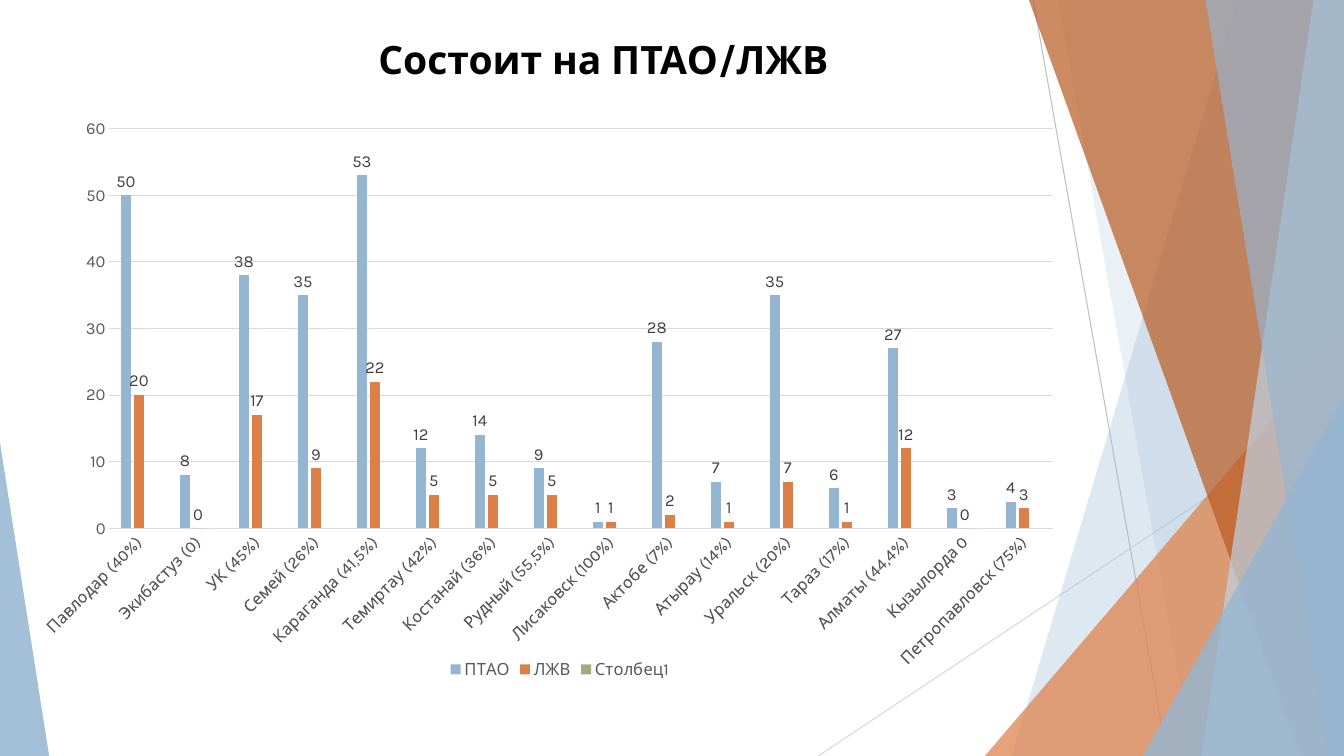
from lxml.etree import SubElement
from pptx import Presentation
from pptx.chart.data import CategoryChartData
from pptx.dml.color import RGBColor
from pptx.enum.chart import XL_CHART_TYPE, XL_LABEL_POSITION, XL_LEGEND_POSITION, XL_TICK_MARK
from pptx.enum.shapes import MSO_CONNECTOR, MSO_SHAPE
from pptx.enum.text import MSO_ANCHOR, PP_ALIGN
from pptx.oxml import parse_xml
from pptx.oxml.ns import nsdecls, qn
from pptx.util import Cm, Pt

FONT = "Karla"
WIDTH, HEIGHT = 33.87, 19.05
TITLE = "Состоит на ПТАО/ЛЖВ"

# city with its share, ПТАО, ЛЖВ
CITIES = [
    ("Павлодар (40%)", 50, 20), ("Экибастуз (0)", 8, 0),
    ("УК (45%)", 38, 17), ("Семей (26%)", 35, 9),
    ("Караганда (41,5%)", 53, 22), ("Темиртау (42%)", 12, 5),
    ("Костанай (36%)", 14, 5), ("Рудный (55,5%)", 9, 5),
    ("Лисаковск (100%)", 1, 1), ("Актобе (7%)", 28, 2),
    ("Атырау (14%)", 7, 1), ("Уральск (20%)", 35, 7),
    ("Тараз (17%)", 6, 1), ("Алматы (44,4%)", 27, 12),
    ("Кызылорда 0", 3, 0), ("Петропавловск (75%)", 4, 3),
]
NAMES, PTAO, LZHV = zip(*CITIES)
SERIES = [
    ("ПТАО", PTAO, "94B6D2"),
    ("ЛЖВ", LZHV, "DD8047"),
    ("Столбец1", [None] * len(CITIES), "A5AB81"),
]

# x1, y1, x2, y2, colour
RAYS = [
    (26.04, 0, 29.41, HEIGHT, "BFBFBF"),
    (WIDTH, 10.24, 20.62, HEIGHT, "D9D9D9"),
]
# Back to front. Band: top left x, bottom left x; it reaches the right edge.
# Wedge: left, top, width, apex; it stands on the bottom edge.
FACETS = [
    ("band", (31.19, 25.5), "94B6D2", 30),
    ("band", (26.67, 30.05), "94B6D2", 20),
    ("wedge", (24.82, 8.46, 9.05, 1), "DD8047", 72),
    ("band", (25.93, 32.79), "B95B22", 70),
    ("band", (33.1, 30.28), "BFD3E4", 70),
    ("band", (30.38, 33.48), "94B6D2", 65),
    ("wedge", (28.8, 9.98, 5.07, 1), "94B6D2", 80),
    ("wedge", (0, 11.15, 1.24, 0), "94B6D2", 85),
]


def rgb(colour):
    return RGBColor.from_string(colour)


def style_font(font, size, colour, bold=False):
    font.name, font.size, font.bold = FONT, Pt(size), bold
    font.color.rgb = rgb(colour)


def style_line(line, colour):
    line.color.rgb = rgb(colour)
    line.width = Pt(0.75)


def add_ray(x1, y1, x2, y2, colour):
    line = shapes.add_connector(MSO_CONNECTOR.STRAIGHT, Cm(x1), Cm(y1), Cm(x2), Cm(y2))
    style_line(line.line, colour)
    SubElement(line._element.spPr, qn("a:effectLst"))


def add_facet(kind, place, colour, opacity):
    if kind == "band":
        top_x, bottom_x = place
        outline = shapes.build_freeform(Cm(top_x), 0)
        outline.add_line_segments(
            [(Cm(x), Cm(y)) for x, y in [(WIDTH, 0), (WIDTH, HEIGHT), (bottom_x, HEIGHT)]])
        sp = outline.convert_to_shape()
    else:
        left, top, width, apex = place
        sp = shapes.add_shape(MSO_SHAPE.ISOSCELES_TRIANGLE, Cm(left), Cm(top),
                              Cm(width), Cm(HEIGHT - top))
        sp.adjustments[0] = apex
    sp.shadow.inherit = False
    sp.line.fill.background()
    sp.fill.solid()
    sp.fill.fore_color.rgb = rgb(colour)
    srgb = sp._element.spPr.find(".//" + qn("a:srgbClr"))
    SubElement(srgb, qn("a:alpha"), val=str(opacity * 1000))


def add_text(text, left, top, width, height, *, size, colour, bold):
    tf = shapes.add_textbox(Cm(left), Cm(top), Cm(width), Cm(height)).text_frame
    tf.word_wrap = True
    tf.vertical_anchor = MSO_ANCHOR.TOP
    tf.margin_top, tf.margin_bottom = Cm(0.2), 0
    p = tf.paragraphs[0]
    p.alignment = PP_ALIGN.CENTER
    r = p.add_run()
    r.text = text
    style_font(r.font, size, colour, bold)


def place_plot(chart, x, y, w, h):
    """Fix the inner plot area as fractions of the chart."""
    plot_area = chart._chartSpace.chart.plotArea
    for old in plot_area.findall(qn("c:layout")):
        plot_area.remove(old)
    plot_area.insert(0, parse_xml(
        f'<c:layout {nsdecls("c")}><c:manualLayout><c:layoutTarget val="inner"/>'
        '<c:xMode val="edge"/><c:yMode val="edge"/>'
        f'<c:x val="{x}"/><c:y val="{y}"/><c:w val="{w}"/><c:h val="{h}"/>'
        '</c:manualLayout></c:layout>'))


def add_city_chart(left, top, width, height):
    data = CategoryChartData()
    data.categories = NAMES
    for name, values, _ in SERIES:
        data.add_series(name, values)
    chart = shapes.add_chart(XL_CHART_TYPE.COLUMN_CLUSTERED, Cm(left), Cm(top),
                             Cm(width), Cm(height), data).chart
    style_font(chart.font, 10, "000000")
    chart.has_title = False
    chart.has_legend = True
    chart.legend.position = XL_LEGEND_POSITION.BOTTOM
    chart.legend.include_in_layout = False
    style_font(chart.legend.font, 12, "595959")

    for axis in (chart.category_axis, chart.value_axis):
        axis.major_tick_mark = axis.minor_tick_mark = XL_TICK_MARK.NONE
        style_font(axis.tick_labels.font, 12, "595959")
    style_line(chart.category_axis.format.line, "D9D9D9")
    values_axis = chart.value_axis
    values_axis.minimum_scale, values_axis.maximum_scale = 0, 60
    values_axis.major_unit = 10
    values_axis.format.line.fill.background()
    style_line(values_axis.major_gridlines.format.line, "D9D9D9")

    plot = chart.plots[0]
    plot.gap_width, plot.overlap = 219, -27
    plot.vary_by_categories = False
    for series, (_, _, colour) in zip(plot.series, SERIES):
        series.format.fill.solid()
        series.format.fill.fore_color.rgb = rgb(colour)
        labels = series.data_labels
        labels.show_value = True
        labels.position = XL_LABEL_POSITION.OUTSIDE_END
        style_font(labels.font, 12, "404040")
    place_plot(chart, 0.053, 0.074, 0.937, 0.667)


prs = Presentation()
prs.slide_width, prs.slide_height = Cm(WIDTH), Cm(HEIGHT)
shapes = prs.slides.add_slide(prs.slide_layouts[6]).shapes

for ray in RAYS:
    add_ray(*ray)
for facet in FACETS:
    add_facet(*facet)
add_text(TITLE, 4.15, 0.69, 22.12, 1.45, size=27.9, colour="000000", bold=True)
add_city_chart(1.07, 2.13, 25.73, 15.09)

prs.save("out.pptx")
